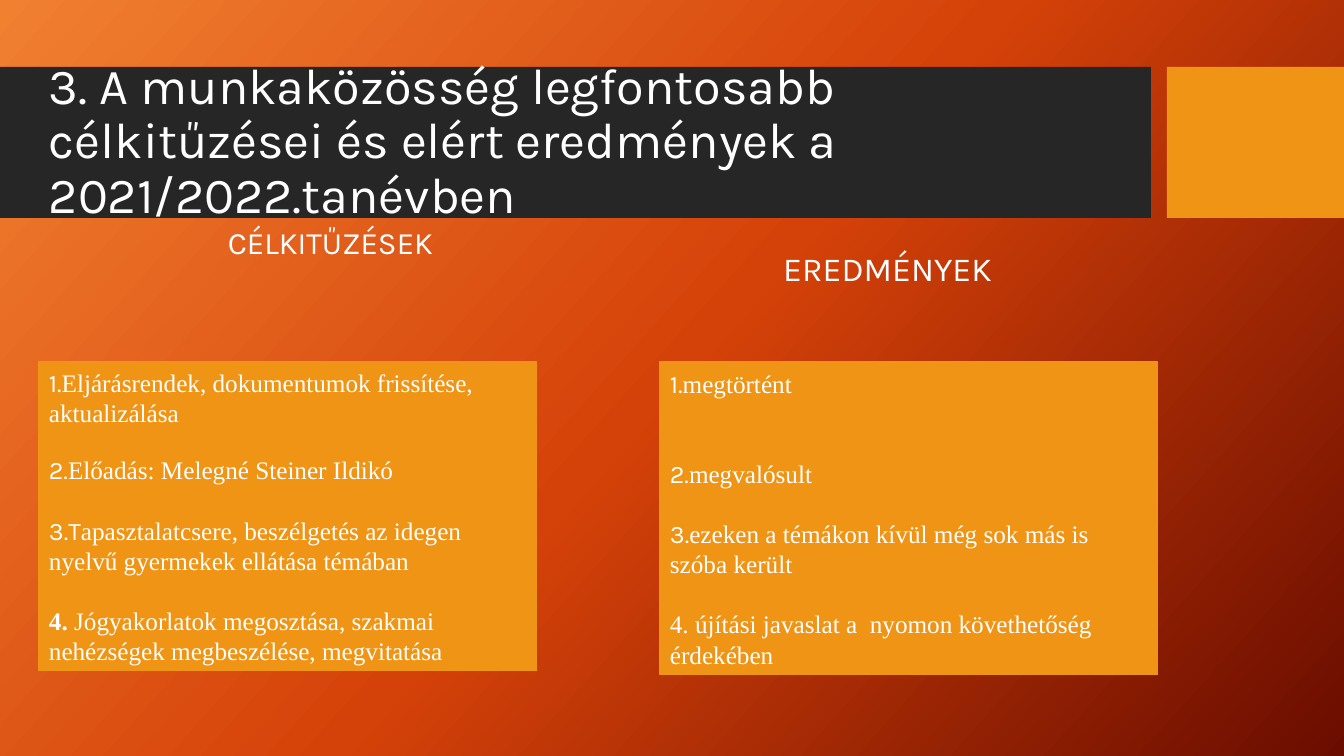
import pptx
import pptx.dml.color
import pptx.enum.shapes
import pptx.enum.text
import pptx.oxml
import pptx.oxml.ns
import pptx.util

EMU_PER_PX = 12192000 / 1344
SANS, SERIF = "Karla", "Times New Roman"
WHITE, DARK, AMBER = "FFFFFF", "262626", "F09415"
LEFT, MIDDLE = pptx.enum.text.PP_ALIGN.LEFT, pptx.enum.text.MSO_ANCHOR.MIDDLE
CENTER, TOP = pptx.enum.text.PP_ALIGN.CENTER, pptx.enum.text.MSO_ANCHOR.TOP


def px(length):
    return pptx.util.Emu(round(length * EMU_PER_PX))


def color(hex_string):
    return pptx.dml.color.RGBColor.from_string(hex_string)


class SlideBuilder:
    """Holds the text style and the slide being built."""

    def __init__(self, slide, text_color=WHITE, body_size=18):
        self.slide = slide
        self.text_color = text_color
        self.body_size = body_size

    def background(self, stops, clockwise_angle):
        fill = self.slide.background.fill
        fill.gradient()
        fill.gradient_angle = 360 - clockwise_angle
        stop_list = next(self.slide.element.iter(pptx.oxml.ns.qn("a:gsLst")))
        for default_stop in list(stop_list):
            stop_list.remove(default_stop)
        for percent, hex_string in stops:
            stop_list.append(pptx.oxml.parse_xml(
                f'<a:gs {pptx.oxml.ns.nsdecls("a")} pos="{percent * 1000}">'
                f'<a:srgbClr val="{hex_string}"/></a:gs>'))

    def rectangle(self, left, top, width, height, fill, outlined=False):
        block = self.slide.shapes.add_shape(
            pptx.enum.shapes.MSO_SHAPE.RECTANGLE, px(left), px(top), px(width), px(height))
        block.shadow.inherit = False
        block.fill.solid()
        block.fill.fore_color.rgb = color(fill)
        if outlined:
            block.line.color.rgb = color(fill)
            block.line.width = pptx.util.Pt(0.75)
        else:
            block.line.fill.background()
        return block

    def heading(self, left, top, width, height, text, size, spacing, align=CENTER, anchor=TOP):
        frame = self.slide.shapes.add_textbox(px(left), px(top), px(width), px(height)).text_frame
        frame.word_wrap = True
        frame.vertical_anchor = anchor
        paragraph = frame.paragraphs[0]
        paragraph.text = text
        paragraph.alignment = align
        paragraph.line_spacing = spacing
        self.style(paragraph, size)
        paragraph.font.name = SANS

    def panel(self, left, top, width, height, items):
        """Each item is (gap above, [(text, font, bold), ...])."""
        frame = self.rectangle(left, top, width, height, AMBER, outlined=True).text_frame
        frame.word_wrap = True
        frame.vertical_anchor = MIDDLE
        for index, (gap, parts) in enumerate(items):
            paragraph = frame.add_paragraph() if index else frame.paragraphs[0]
            paragraph.alignment = LEFT
            if gap:
                paragraph.space_before = px(gap)
            self.style(paragraph, self.body_size)
            for text, font, bold in parts:
                run = paragraph.add_run()
                run.text = text
                run.font.name = font
                run.font.bold = bold

    def style(self, paragraph, size):
        paragraph.font.size = pptx.util.Pt(size)
        paragraph.font.color.rgb = color(self.text_color)


def numbered(gap, number, text, number_font=SANS, bold=False):
    return gap, [(number, number_font, bold), (text, SERIF, False)]


GOALS = [
    numbered(0, "1.", "Eljárásrendek, dokumentumok frissítése, aktualizálása"),
    numbered(27, "2.", "Előadás: Melegné Steiner Ildikó"),
    numbered(30, "3.T", "apasztalatcsere, beszélgetés az idegen nyelvű gyermekek ellátása témában"),
    numbered(30, "4. ", "Jógyakorlatok megosztása, szakmai nehézségek megbeszélése, megvitatása",
             SERIF, True),
]
RESULTS = [
    numbered(0, "1.", "megtörtént"),
    numbered(60, "2.", "megvalósult"),
    numbered(30, "3.", "ezeken a témákon kívül még sok más is szóba került"),
    (30, [("4. újítási javaslat a  nyomon követhetőség érdekében", SERIF, False)]),
]


def main():
    deck = pptx.Presentation()
    deck.slide_width, deck.slide_height = px(1344), px(756)
    page = SlideBuilder(deck.slides.add_slide(deck.slide_layouts[6]))
    page.background([(0, "F18031"), (50, "D54209"), (100, "6A0D00")], 42)

    # Title band
    page.rectangle(0, 67, 1151, 151, DARK)
    page.rectangle(1167, 67, 177, 151, AMBER)
    page.heading(39, 91, 1089, 103,
                 "3. A munkaközösség legfontosabb célkitűzései és elért eredmények "
                 "a 2021/2022.tanévben", 36, 0.9, LEFT, MIDDLE)

    # Column headings
    page.heading(154, 229, 353, 64, "CÉLKITŰZÉSEK", 22.2, 0.7)
    page.heading(711, 251, 353, 50, "EREDMÉNYEK", 24, 0.8)

    # Goals and results
    page.panel(39, 362, 498, 309, GOALS)
    page.panel(660, 362, 498, 313, RESULTS)

    deck.save("out.pptx")


if __name__ == "__main__":
    main()
